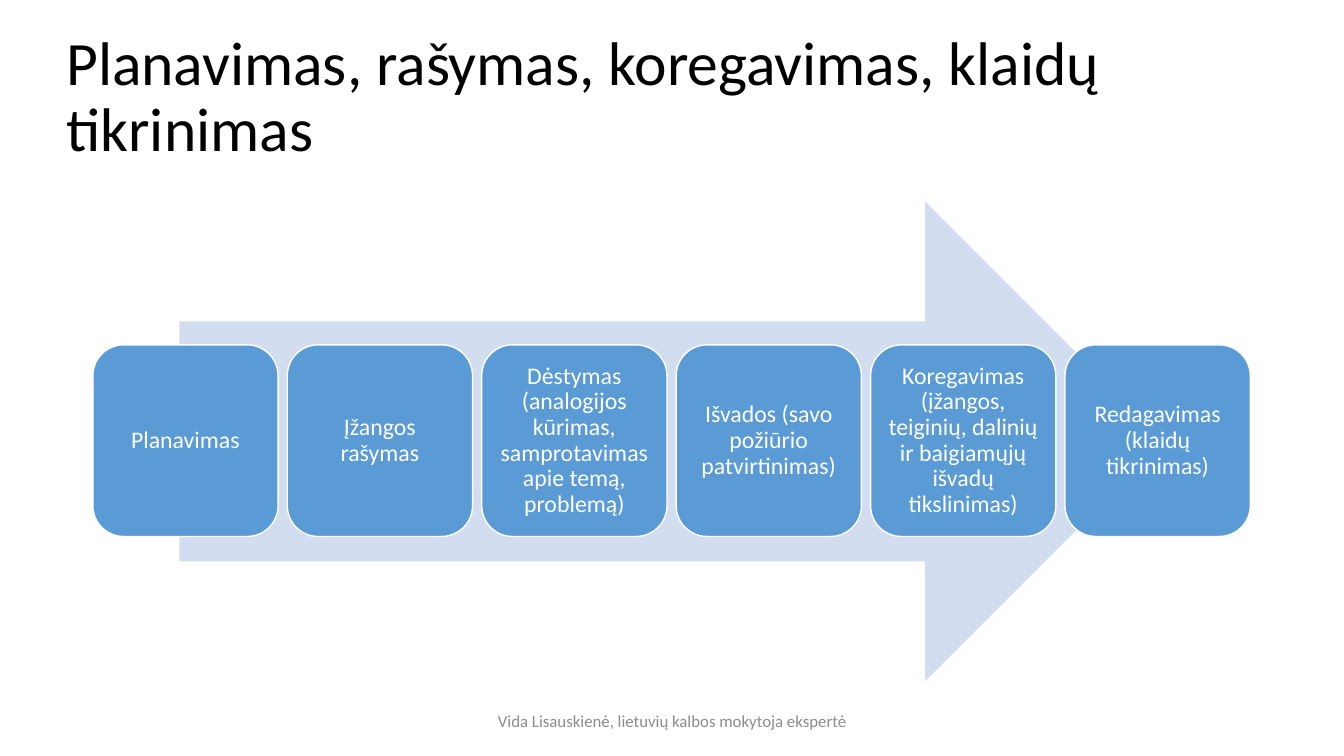
from dataclasses import dataclass

from pptx import Presentation
from pptx.dml.color import RGBColor
from pptx.enum import shapes, text
from pptx.util import Cm, Pt


@dataclass(frozen=True)
class Theme:
    font: str = "Calibri"
    ink: str = "000000"
    white: str = "FFFFFF"
    arrow: str = "D2DEEF"
    step: str = "5B9BD5"
    muted: str = "8C8C8C"
    title_size: int = 44
    step_size: int = 17
    footer_size: int = 12


theme = Theme()


def write(holder, wording, size, color, align, line_spacing=1.0):
    frame = holder.text_frame
    frame.word_wrap = True
    frame.vertical_anchor = text.MSO_ANCHOR.MIDDLE
    paragraph = frame.paragraphs[0]
    paragraph.text = wording
    paragraph.alignment = align
    paragraph.line_spacing = line_spacing
    paragraph.font.name = theme.font
    paragraph.font.size = Pt(size)
    paragraph.font.color.rgb = RGBColor.from_string(color)


def add_filled(kind, left, top, width, height, color):
    shape = slide.shapes.add_shape(kind, Cm(left), Cm(top), Cm(width), Cm(height))
    shape.shadow.inherit = False
    shape.fill.solid()
    shape.fill.fore_color.rgb = RGBColor.from_string(color)
    shape.line.fill.background()
    return shape


prs = Presentation()
prs.slide_width, prs.slide_height = Cm(33.87), Cm(19.05)
slide = prs.slides.add_slide(prs.slide_layouts[6])

# Title
title = slide.shapes.add_textbox(Cm(1.42), Cm(0.64), Cm(29.21), Cm(3.68))
write(title, "Planavimas, rašymas, koregavimas, klaidų tikrinimas",
      theme.title_size, theme.ink, text.PP_ALIGN.LEFT, 0.9)

# Arrow behind the steps
add_filled(shapes.MSO_SHAPE.RIGHT_ARROW, 4.52, 5.08, 24.84, 12.09, theme.arrow)

# Writing steps, evenly spaced along the arrow
steps = [
    "Planavimas",
    "Įžangos rašymas",
    "Dėstymas (analogijos kūrimas, samprotavimas apie temą, problemą)",
    "Išvados (savo požiūrio patvirtinimas)",
    "Koregavimas (įžangos, teiginių, dalinių ir baigiamųjų išvadų tikslinimas)",
    "Redagavimas (klaidų tikrinimas)",
]
first_left, pitch = 2.34, 4.9
for index, wording in enumerate(steps):
    step = add_filled(shapes.MSO_SHAPE.ROUNDED_RECTANGLE,
                      first_left + index * pitch, 8.69, 4.67, 4.83, theme.step)
    step.line.color.rgb = RGBColor.from_string(theme.white)
    step.line.width = Pt(1)
    frame = step.text_frame
    frame.margin_left = frame.margin_right = Cm(0.18)
    frame.margin_top = frame.margin_bottom = Cm(0.18)
    write(step, wording, theme.step_size, theme.white, text.PP_ALIGN.CENTER, 0.9)

# Footer
footer = slide.shapes.add_textbox(Cm(11.23), Cm(17.65), Cm(11.43), Cm(1.02))
write(footer, "Vida Lisauskienė, lietuvių kalbos mokytoja ekspertė",
      theme.footer_size, theme.muted, text.PP_ALIGN.CENTER)

prs.save("out.pptx")
